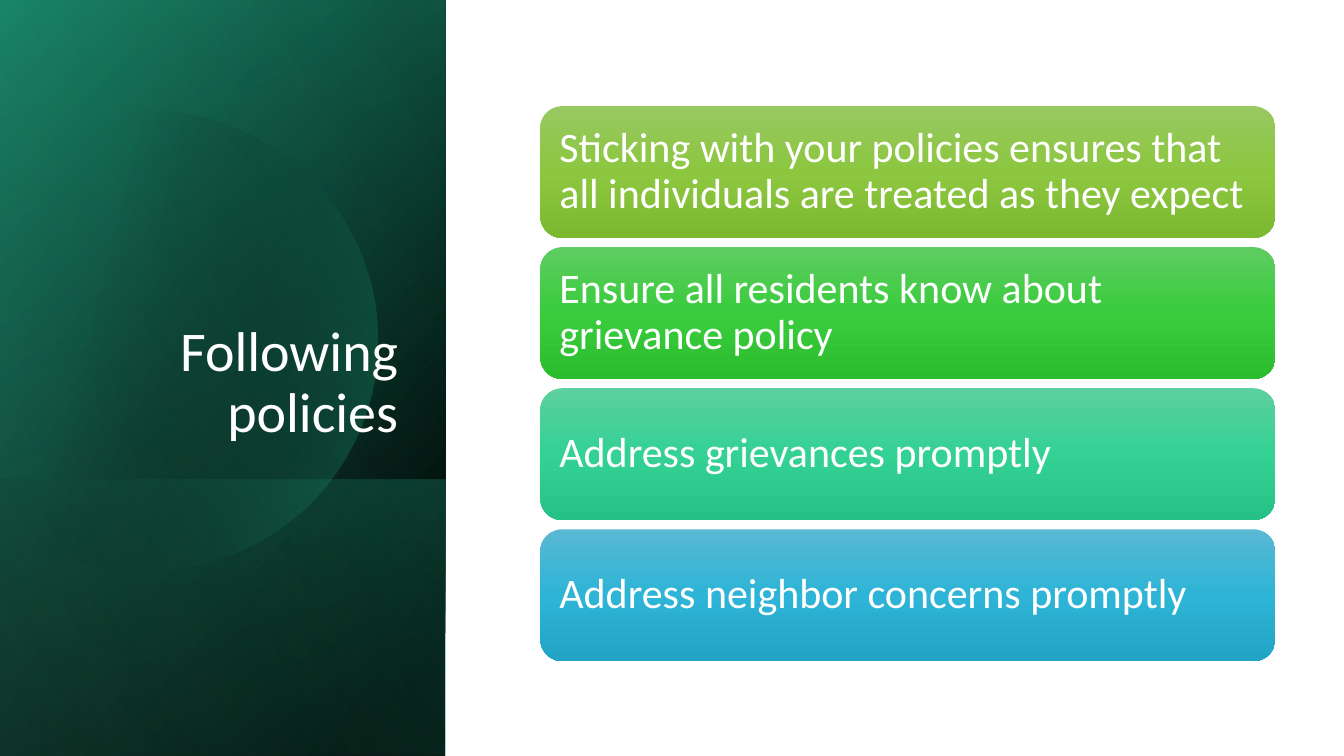
import math

import lxml.etree
import pptx
import pptx.dml.color
import pptx.enum.shapes
import pptx.enum.text
import pptx.oxml.ns
import pptx.util

Pt = pptx.util.Pt
qn = pptx.oxml.ns.qn
SHAPE = pptx.enum.shapes.MSO_SHAPE
ANCHOR = pptx.enum.text.MSO_ANCHOR
ALIGN = pptx.enum.text.PP_ALIGN

SLIDE_WIDTH, SLIDE_HEIGHT = 960, 540
PANEL_WIDTH = 318.24
FONT = "Calibri"
COLORS = {
    "white": "FFFFFF",
    "black": "000000",
    "dark green": "16745A",
    "green": "1D9A78",
    "mint": "5AE0BB",
}
CARDS = [
    ("Sticking with your policies ensures that all individuals are treated as they expect",
     ("98C862", "8CC73F", "7DB831")),
    ("Ensure all residents know about grievance policy",
     ("5FCC61", "39CC3D", "2CBD2F")),
    ("Address grievances promptly",
     ("5CD09E", "34D194", "26C186")),
    ("Address neighbor concerns promptly",
     ("59B8D4", "2EB4D6", "21A4C6")),
]


def fill_gradient(shape, stops, angle):
    """Fill with (position %, hex colour, opacity %) stops, angle clockwise."""
    shape.shadow.inherit = False
    shape.line.fill.background()
    shape.fill.gradient()
    gradient = shape._element.spPr.find(qn("a:gradFill"))
    stop_list = gradient.find(qn("a:gsLst"))
    for old_stop in list(stop_list):
        stop_list.remove(old_stop)
    for position, color, opacity in stops:
        stop = lxml.etree.SubElement(stop_list, qn("a:gs"), pos=str(position * 1000))
        rgb = lxml.etree.SubElement(stop, qn("a:srgbClr"), val=color)
        if opacity < 100:
            lxml.etree.SubElement(rgb, qn("a:alpha"), val=str(opacity * 1000))
    gradient.find(qn("a:lin")).set("ang", str(angle * 60000))


def style_text(shape, text, size, alignment, anchor):
    frame = shape.text_frame
    frame.text = text
    frame.word_wrap = True
    frame.auto_size = pptx.enum.text.MSO_AUTO_SIZE.NONE
    frame.vertical_anchor = anchor
    paragraph = frame.paragraphs[0]
    paragraph.alignment = alignment
    paragraph.line_spacing = 0.9
    paragraph.font.name = FONT
    paragraph.font.size = Pt(size)
    paragraph.font.color.rgb = pptx.dml.color.RGBColor.from_string(COLORS["white"])


def add_turned_layer(slide, left, top, width, height, stops, angle):
    """Add a mirrored rectangle, turned a quarter, that covers the given box."""
    shift = (width - height) / 2
    layer = slide.shapes.add_shape(
        SHAPE.RECTANGLE, Pt(left + shift), Pt(top - shift), Pt(height), Pt(width))
    layer.rotation = 90
    layer._element.spPr.find(qn("a:xfrm")).set("flipH", "1")
    fill_gradient(layer, stops, angle)


def add_disc(slide, left, center_x, center_y, radius):
    """Add a translucent disc cut off at the left edge of the panel."""
    limit = math.acos((left - center_x) / radius)
    steps = 120
    angles = [limit * (2 * step / steps - 1) for step in range(steps + 1)]
    points = [(Pt(center_x + radius * math.cos(angle)),
               Pt(center_y + radius * math.sin(angle))) for angle in angles]
    builder = slide.shapes.build_freeform(*points[0])
    builder.add_line_segments(points[1:], close=True)
    fill_gradient(builder.convert_to_shape(),
                  [(29, COLORS["black"], 0), (100, COLORS["green"], 43)], 14)


def add_panel(slide, left, top, width, height):
    black, green = COLORS["black"], COLORS["green"]
    box = (left, top, width, height)
    add_turned_layer(slide, *box, [(8, black, 100), (100, COLORS["dark green"], 100)], 50)
    add_turned_layer(slide, *box, [(0, black, 0), (99, green, 46)], 30)
    band_height = 197.28
    add_turned_layer(slide, left, top + height - band_height, width, band_height,
                     [(2, green, 29), (100, black, 30)], 130)
    add_disc(slide, left, left + 105.1, top + 243.4, 164.2)
    add_turned_layer(slide, *box, [(0, black, 0), (99, COLORS["mint"], 11)], 120)


def place_title(slide, text, left, top, width, height):
    title = slide.shapes.title
    title.left, title.top, title.width, title.height = map(Pt, (left, top, width, height))
    style_text(title, text, 40, ALIGN.RIGHT, ANCHOR.BOTTOM)
    slide.shapes._spTree.append(title._element)  # in front of the panel


def add_cards(slide, cards, left, top, width, height, gap):
    card_height = (height - gap * (len(cards) - 1)) / len(cards)
    for index, (text, colors) in enumerate(cards):
        card = slide.shapes.add_shape(
            SHAPE.ROUNDED_RECTANGLE, Pt(left), Pt(top + index * (card_height + gap)),
            Pt(width), Pt(card_height))
        fill_gradient(card, zip((0, 50, 100), colors, (100, 100, 100)), 90)
        style_text(card, text, 30, ALIGN.LEFT, ANCHOR.MIDDLE)
        frame = card.text_frame
        frame.margin_left = frame.margin_right = Pt(9)
        frame.margin_top = frame.margin_bottom = Pt(9)


def main():
    presentation = pptx.Presentation()
    presentation.slide_width = Pt(SLIDE_WIDTH)
    presentation.slide_height = Pt(SLIDE_HEIGHT)
    slide = presentation.slides.add_slide(presentation.slide_layouts[5])
    add_panel(slide, 0, 0, PANEL_WIDTH, SLIDE_HEIGHT)
    place_title(slide, "Following policies", 46, 132.5, 245.5, 188.6)
    add_cards(slide, CARDS, 386, 75.8, 525, 396.4, 6.6)
    presentation.save("out.pptx")


if __name__ == "__main__":
    main()
